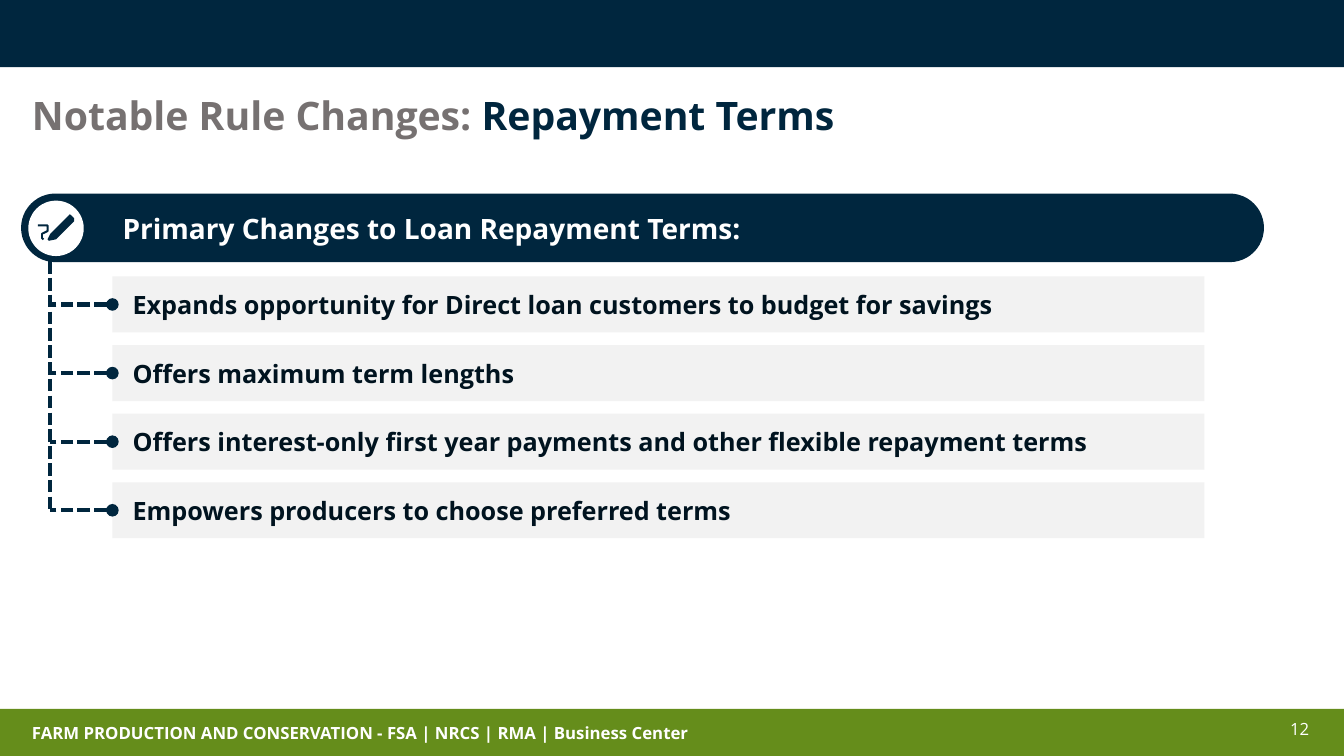
from pptx import Presentation
from pptx.dml.color import RGBColor
from pptx.enum import dml, shapes, text
from pptx.oxml import ns
from pptx.util import Pt
from lxml import etree

COLORS = {"navy": "00263E", "green": "658D1B", "gray": "767171",
          "pale": "F2F2F2", "ink": "00131F", "white": "FFFFFF"}
CHANGES = [
    "Expands opportunity for Direct loan customers to budget for savings",
    "Offers maximum term lengths",
    "Offers interest-only first year payments and other flexible repayment terms",
    "Empowers producers to choose preferred terms",
]
BAR_LEFT, BAR_TOP, BAR_WIDTH, BAR_HEIGHT, BAR_PITCH = 80.3, 197.5, 780, 40, 49
TRUNK_X, HEADER_BOTTOM = 35.7, 186.5
PEN = [(53.3, 157.7), (47.5, 162.7), (39.6, 170.6), (35.3, 172.3), (34.5, 171.4),
       (36, 167), (43.9, 159.1), (49, 153.7), (50.4, 153.4), (53.2, 156.3)]
SQUIGGLE = [(27.2, 161.1), (31, 160.7), (33.5, 161.4), (34.5, 162.8), (33.8, 164.7),
            (30.5, 167), (29.6, 168.4), (30.2, 169.9), (31.1, 170.6)]


def color(name):
    """Return the palette colour with this name."""
    return RGBColor.from_string(COLORS[name])


def set_text(s, runs, size, bold=True, left=7.2, anchor=text.MSO_ANCHOR.TOP, spacing=None):
    """Fill a shape with one left-aligned paragraph of (text, colour) runs."""
    tf = s.text_frame
    tf.word_wrap = True
    tf.vertical_anchor = anchor
    tf.margin_left = Pt(left)
    p = tf.paragraphs[0]
    p.alignment = text.PP_ALIGN.LEFT
    if spacing:
        p.line_spacing = spacing
    for words, name in runs:
        r = p.add_run()
        r.text = words
        r.font.name, r.font.size, r.font.bold = "Open Sans", Pt(size), bold
        r.font.color.rgb = color(name)


def add_label(sp, box, runs, size, **format):
    """Add a text box."""
    set_text(sp.add_textbox(*map(Pt, box)), runs, size, **format)


def add_block(sp, kind, box, fill):
    """Add a flat filled preset shape without an outline."""
    s = sp.add_shape(kind, *map(Pt, box))
    s.shadow.inherit = False
    s.fill.solid()
    s.fill.fore_color.rgb = color(fill)
    s.line.fill.background()
    return s


def add_stroke(sp, points, closed):
    """Add a navy outline, filled when it is closed."""
    builder = sp.build_freeform(*points[0], scale=Pt(1))
    builder.add_line_segments(points[1:], close=closed)
    s = builder.convert_to_shape()
    s.shadow.inherit = False
    if closed:
        s.fill.solid()
        s.fill.fore_color.rgb = color("navy")
        s.line.fill.background()
    else:
        s.fill.background()
        s.line.color.rgb = color("navy")
        s.line.width = Pt(1.4)


def add_dash(sp, start, end, bar=None):
    """Add a dashed line, starting with a dot on a bar if one is given."""
    s = sp.add_connector(shapes.MSO_CONNECTOR.STRAIGHT, *map(Pt, start + end))
    s.line.color.rgb = color("navy")
    s.line.width = Pt(3)
    s.line.dash_style = dml.MSO_LINE.SQUARE_DOT
    if bar is not None:
        s.begin_connect(bar, 1)
        etree.SubElement(s.line._get_or_add_ln(), ns.qn("a:headEnd"), type="oval")
    etree.SubElement(s._element.spPr, ns.qn("a:effectLst"))


def add_header(sp):
    """Add the rounded heading with its pen icon."""
    s = add_block(sp, shapes.MSO_SHAPE.ROUNDED_RECTANGLE, (15.8, 139, 886.3, 47.5), "navy")
    s.adjustments[0] = 0.5
    s.line.color.rgb = color("navy")
    s.line.width = Pt(1.5)
    set_text(s, [("Primary Changes to Loan Repayment Terms:", "white")], 20,
             left=64.8, anchor=text.MSO_ANCHOR.MIDDLE)
    add_block(sp, shapes.MSO_SHAPE.OVAL, (20.2, 143.3, 39.6, 39.6), "white")
    add_stroke(sp, PEN, closed=True)
    add_stroke(sp, SQUIGGLE, closed=False)


def add_changes(sp):
    """Add the bars and the dashed tree that joins them."""
    for i, change in enumerate(CHANGES):
        top = BAR_TOP + i * BAR_PITCH
        middle = top + BAR_HEIGHT / 2
        bar = add_block(sp, shapes.MSO_SHAPE.RECTANGLE,
                        (BAR_LEFT, top, BAR_WIDTH, BAR_HEIGHT), "pale")
        set_text(bar, [(change, "ink")], 18, left=14.4, anchor=text.MSO_ANCHOR.MIDDLE)
        add_dash(sp, (BAR_LEFT, middle), (TRUNK_X, middle), bar)
    add_dash(sp, (TRUNK_X, HEADER_BOTTOM), (TRUNK_X, middle))


def main():
    """Build and save the slide."""
    prs = Presentation()
    prs.slide_width, prs.slide_height = Pt(960), Pt(540)
    sp = prs.slides.add_slide(prs.slide_layouts[6]).shapes
    add_block(sp, shapes.MSO_SHAPE.RECTANGLE, (0, 0, 960, 48), "navy")
    add_block(sp, shapes.MSO_SHAPE.RECTANGLE, (0, 506.3, 960, 33.7), "green")
    add_label(sp, (15.8, 512.6, 564.5, 25), [
        ("FARM PRODUCTION AND CONSERVATION - FSA | NRCS | RMA | Business Center", "white")], 12)
    add_label(sp, (15.8, 65.5, 920, 60), [
        ("Notable Rule Changes: ", "gray"), ("Repayment Terms", "navy")], 28, spacing=0.9)
    add_header(sp)
    add_changes(sp)
    add_label(sp, (914.4, 509.8, 32.4, 28), [("12", "white")], 12, bold=False)
    prs.save("out.pptx")


if __name__ == "__main__":
    main()
